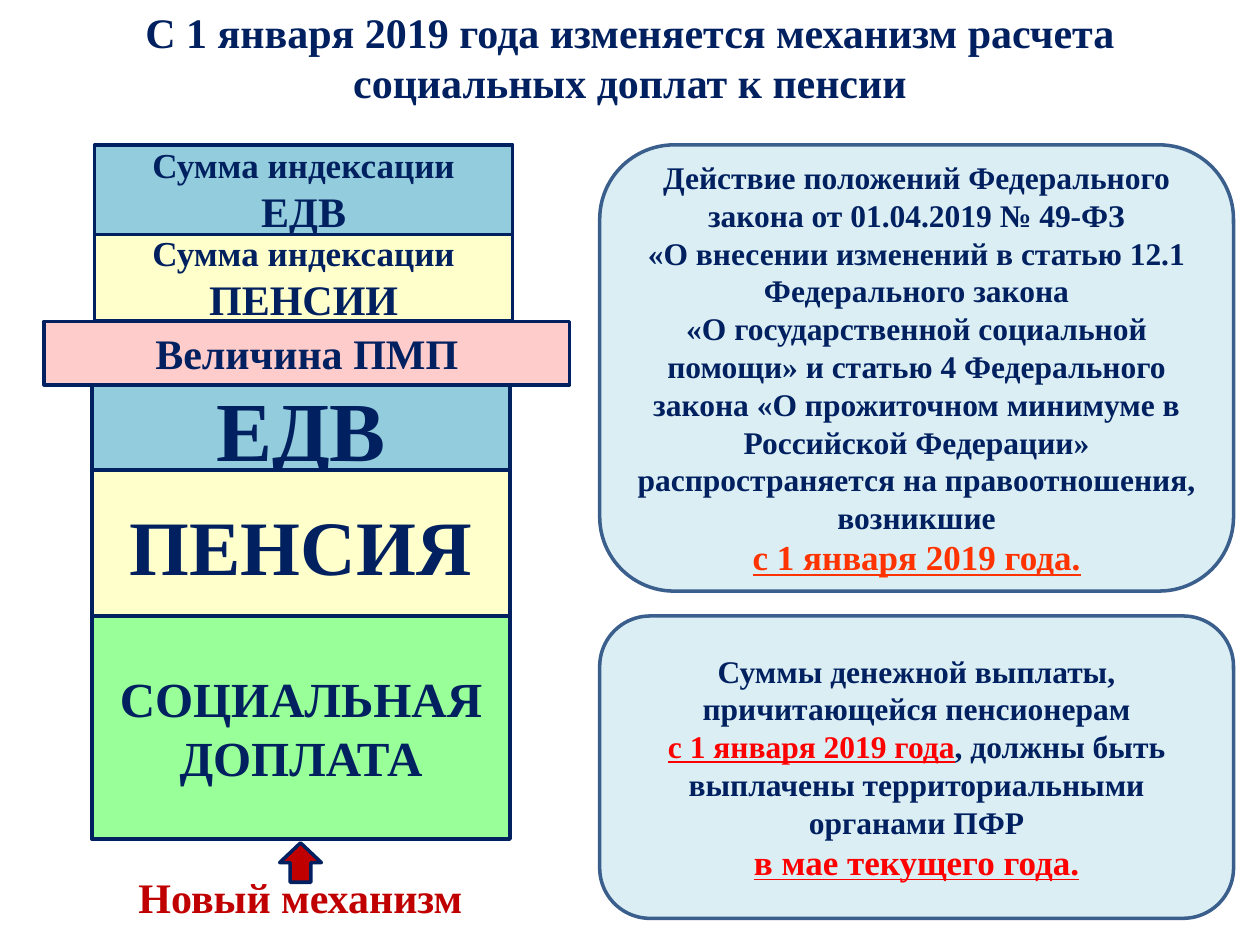
from pptx import Presentation
from pptx.dml.color import RGBColor
from pptx.enum import shapes, text
from pptx.util import Pt

FONT = "Times New Roman"
COLORS = {
    "navy": "002060",
    "blue": "93CDDD",
    "yellow": "FFFFCC",
    "green": "99FF99",
    "pink": "FFCCCC",
    "pale": "DBEEF4",
    "border": "3A5F8C",
    "orange": "FF3300",
    "red": "FF0000",
    "dark_red": "C00000",
}
SHAPE = shapes.MSO_SHAPE
COLUMN_WIDTH = 239
UPPER_LEFT, LOWER_LEFT = 54, 52.5
NOTE_LEFT, NOTE_WIDTH = 342.7, 362.2

# Left, top, width, height, fill, lines of (wording, size)
BLOCKS = [
    (UPPER_LEFT, 134, COLUMN_WIDTH, 49.6, "yellow", [("Сумма индексации", 20), ("ПЕНСИИ", 24)]),
    (LOWER_LEFT, 220.3, COLUMN_WIDTH, 48.3, "blue", [("ЕДВ", 48)]),
    (LOWER_LEFT, 268.6, COLUMN_WIDTH, 85, "yellow", [("ПЕНСИЯ", 44)]),
    (LOWER_LEFT, 352, COLUMN_WIDTH, 127.5, "green", [("СОЦИАЛЬНАЯ ДОПЛАТА", 28)]),
    (UPPER_LEFT, 82.8, COLUMN_WIDTH, 51.2, "blue", [("Сумма индексации", 20), ("ЕДВ", 24)]),
    (25.2, 183.6, 300.3, 36.3, "pink", [("Величина ПМП", 24)]),
]

LAW_NOTE = (
    "Действие положений Федерального закона от 01.04.2019 № 49-ФЗ\n"
    "«О внесении изменений в статью 12.1 Федерального закона\n"
    "«О государственной социальной помощи» и статью 4 Федерального "
    "закона «О прожиточном минимуме в Российской Федерации» "
    "распространяется на правоотношения, возникшие"
)
# Top, height, paragraphs of (size, runs of (wording, accent colour or None))
NOTES = [
    (82.8, 255, [
        (18, [(LAW_NOTE, None)]),
        (20, [("с 1 января 2019 года.", "orange")]),
    ]),
    (352, 172.8, [
        (18, [
            ("Суммы денежной выплаты, причитающейся пенсионерам\n", None),
            ("с 1 января 2019 года", "red"),
            (", должны быть выплачены территориальными органами ПФР", None),
        ]),
        (20, [("в мае текущего года.", "red")]),
    ]),
]


def rgb(name):
    return RGBColor.from_string(COLORS[name])


def add_box(slide, kind, bounds, fill, line="navy"):
    shape = slide.shapes.add_shape(kind, *map(Pt, bounds))
    shape.shadow.inherit = False
    shape.fill.solid()
    shape.fill.fore_color.rgb = rgb(fill)
    shape.line.color.rgb = rgb(line)
    shape.line.width = Pt(2)
    return shape


def add_runs(paragraph, wording, accent):
    """Add wording with its line breaks; an accent is coloured and underlined."""
    for index, line in enumerate(wording.split("\n")):
        if index:
            paragraph.add_line_break()
        if not line:
            continue
        run = paragraph.add_run()
        run.text = line
        if accent:
            run.font.color.rgb = rgb(accent)
            run.font.underline = True


def write(shape, paragraphs, color="navy", anchor=text.MSO_ANCHOR.MIDDLE):
    frame = shape.text_frame
    frame.word_wrap = True
    frame.vertical_anchor = anchor
    for index, (size, runs) in enumerate(paragraphs):
        paragraph = frame.add_paragraph() if index else frame.paragraphs[0]
        paragraph.alignment = text.PP_ALIGN.CENTER
        font = paragraph.font
        font.name, font.size, font.bold = FONT, Pt(size), True
        font.color.rgb = rgb(color)
        for wording, accent in runs:
            add_runs(paragraph, wording, accent)


def add_label(slide, bounds, lines, color="navy", anchor=text.MSO_ANCHOR.MIDDLE):
    box = slide.shapes.add_textbox(*map(Pt, bounds))
    write(box, [(24, [(line, None)]) for line in lines], color, anchor)


def add_block(slide, left, top, width, height, fill, lines):
    block = add_box(slide, SHAPE.RECTANGLE, (left, top, width, height), fill)
    write(block, [(size, [(wording, None)]) for wording, size in lines])


def add_note(slide, top, height, paragraphs):
    bounds = (NOTE_LEFT, top, NOTE_WIDTH, height)
    note = add_box(slide, SHAPE.ROUNDED_RECTANGLE, bounds, "pale", "border")
    write(note, paragraphs)


def main():
    presentation = Presentation()
    presentation.slide_width, presentation.slide_height = Pt(720), Pt(540)
    slide = presentation.slides.add_slide(presentation.slide_layouts[6])

    title = ["С 1 января 2019 года изменяется механизм расчета", "социальных доплат к пенсии"]
    add_label(slide, (0, 0, 720, 65.5), title, anchor=text.MSO_ANCHOR.TOP)
    for block in BLOCKS:
        add_block(slide, *block)
    for note in NOTES:
        add_note(slide, *note)
    add_label(slide, (52.5, 492.5, 238.3, 39.6), ["Новый механизм"], "dark_red")
    arrow = add_box(slide, SHAPE.RIGHT_ARROW, (160.5, 481, 22.5, 23.8), "dark_red")
    arrow.rotation = 270

    presentation.save("out.pptx")


if __name__ == "__main__":
    main()
